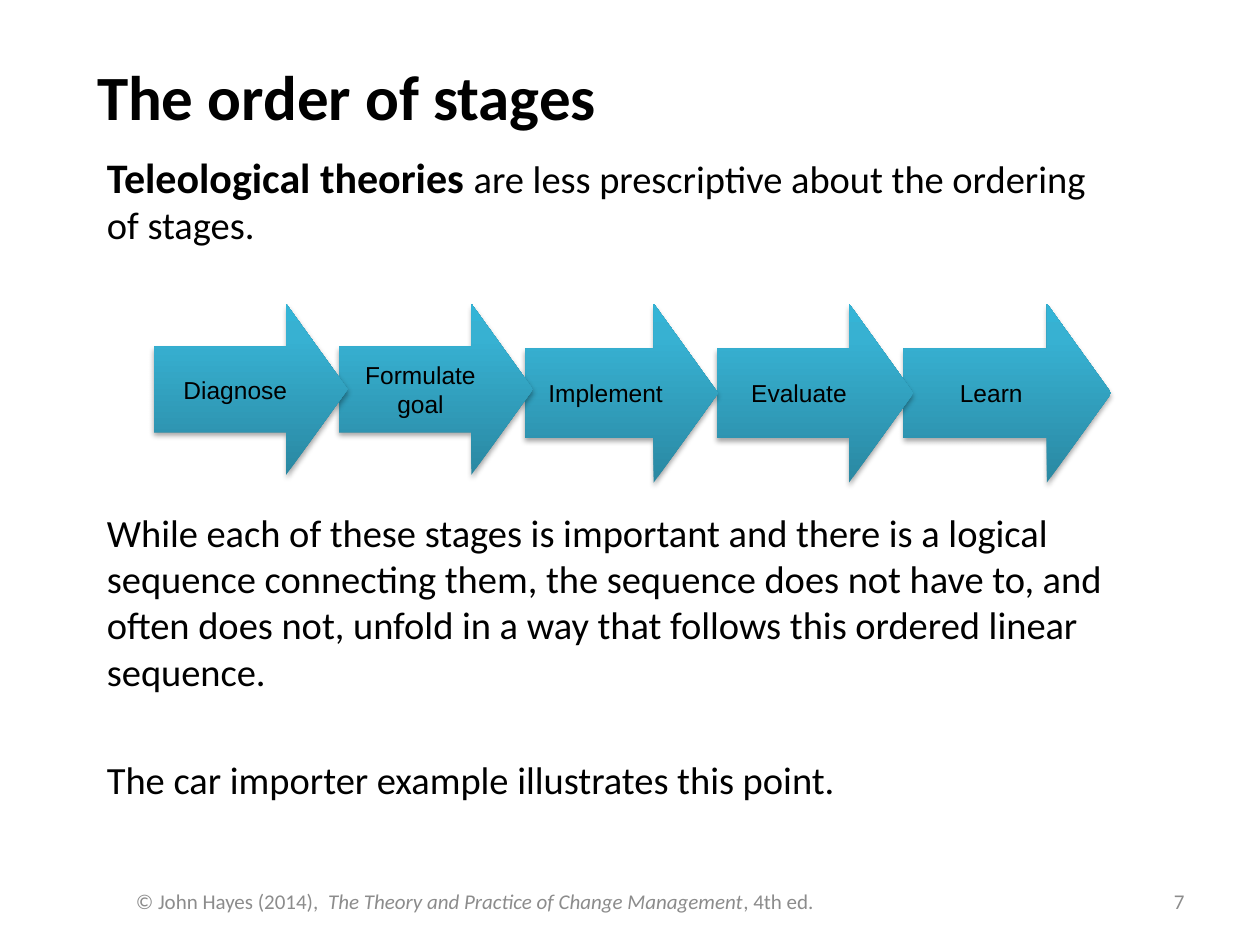
"""Build the slide on the order of stages in teleological theories."""
from dataclasses import dataclass

import pptx
import pptx.dml.color
import pptx.enum.shapes
import pptx.enum.text
import pptx.oxml
import pptx.oxml.ns
import pptx.util

Inches = pptx.util.Inches
Align = pptx.enum.text.PP_ALIGN
Anchor = pptx.enum.text.MSO_ANCHOR


@dataclass(frozen=True)
class Theme:
    body_font: str = "Calibri"
    arrow_font: str = "Arial"
    ink: str = "000000"
    muted: str = "8C8C8C"
    gradient: tuple = ((0, "2A88A2"), (80, "37B1D2"), (100, "34B4D6"))
    title_size: int = 36
    lead_size: int = 24
    body_size: int = 22
    arrow_size: int = 14
    footer_size: int = 12


class SlideBuilder:
    def __init__(self, presentation, theme):
        self.theme = theme
        self.slide = presentation.slides.add_slide(presentation.slide_layouts[5])

    def style(self, font, size, color, name=None, bold=False):
        font.name = name or self.theme.body_font
        font.size = pptx.util.Pt(size)
        font.bold = bold
        font.color.rgb = pptx.dml.color.RGBColor.from_string(color)

    def title(self, text, box):
        title = self.slide.shapes.title
        title.left, title.top, title.width, title.height = map(Inches, box)
        frame = title.text_frame
        frame.text = text
        frame.auto_size = pptx.enum.text.MSO_AUTO_SIZE.NONE
        frame.vertical_anchor = Anchor.TOP
        paragraph = frame.paragraphs[0]
        paragraph.alignment = Align.LEFT
        self.style(paragraph.font, self.theme.title_size, self.theme.ink, bold=True)

    def text(self, runs, box, size=None, color=None, align=Align.LEFT, anchor=Anchor.TOP):
        frame = self.slide.shapes.add_textbox(*map(Inches, box)).text_frame
        frame.word_wrap = True
        frame.vertical_anchor = anchor
        paragraph = frame.paragraphs[0]
        paragraph.alignment = align
        self.style(paragraph.font, size or self.theme.body_size, color or self.theme.ink)
        for text in runs:
            paragraph.add_run().text = text
        return paragraph

    def arrow(self, lines, left, width, height, head):
        shape = self.slide.shapes.add_shape(
            pptx.enum.shapes.MSO_SHAPE.RIGHT_ARROW,
            Inches(left), Inches(2.41), Inches(width), Inches(height))
        shape.adjustments[0], shape.adjustments[1] = 0.5, head
        shape.line.fill.background()
        self.gradient_and_shadow(shape)
        frame = shape.text_frame
        frame.word_wrap = True
        frame.vertical_anchor = Anchor.MIDDLE
        frame.text = "\n".join(lines)
        for paragraph in frame.paragraphs:
            paragraph.alignment = Align.CENTER
            self.style(paragraph.font, self.theme.arrow_size, self.theme.ink,
                       self.theme.arrow_font)

    def gradient_and_shadow(self, shape):
        namespace = pptx.oxml.ns.nsdecls("a")
        stops = "".join(
            f'<a:gs pos="{position * 1000}"><a:srgbClr val="{color}"/></a:gs>'
            for position, color in self.theme.gradient)
        properties = shape.element.spPr
        properties.insert(2, pptx.oxml.parse_xml(
            f'<a:gradFill {namespace} rotWithShape="1"><a:gsLst>{stops}</a:gsLst>'
            '<a:lin ang="16200000" scaled="0"/></a:gradFill>'))
        properties.append(pptx.oxml.parse_xml(
            f'<a:effectLst {namespace}><a:outerShdw blurRad="39370" dist="22860" '
            'dir="5400000" rotWithShape="0"><a:srgbClr val="000000">'
            '<a:alpha val="35000"/></a:srgbClr></a:outerShdw></a:effectLst>'))


def main():
    presentation = pptx.Presentation()
    presentation.slide_width, presentation.slide_height = Inches(10), Inches(7.5)
    theme = Theme()
    builder = SlideBuilder(presentation, theme)

    stages = (
        (["Diagnose"], 1.22, 1.54, 1.36, 0.36),
        (["Formulate", "goal"], 2.69, 1.54, 1.36, 0.36),
        (["Implement"], 4.17, 1.53, 1.42, 0.36),
        (["Evaluate"], 5.69, 1.56, 1.42, 0.36),
        (["Learn"], 7.17, 1.65, 1.42, 0.36),
    )
    for stage in reversed(stages):
        builder.arrow(*stage)

    lead = builder.text(
        ["Teleological theories ", "are less prescriptive about the ordering of stages."],
        (0.75, 1.15, 8.27, 0.91))
    lead.runs[0].font.size = pptx.util.Pt(theme.lead_size)
    lead.runs[0].font.bold = True

    builder.title("The order of stages", (0.67, 0.41, 5.67, 0.71))
    builder.text(
        ["While each of these stages is important and there is a logical sequence "
         "connecting them, the sequence does not have to, and often does not, unfold "
         "in a way that follows this ordered linear sequence."],
        (0.75, 3.99, 8.58, 1.58))
    builder.text(["The car importer example illustrates this point."],
                 (0.75, 5.95, 8.66, 0.77))

    footer = builder.text(
        ["© John Hayes (2014),  ", "The Theory and Practice of Change Management",
         ", 4th ed."],
        (0.98, 6.95, 7.64, 0.4), theme.footer_size, theme.muted, anchor=Anchor.MIDDLE)
    footer.runs[1].font.italic = True
    builder.text(["7"], (7.17, 6.95, 2.33, 0.4), theme.footer_size, theme.muted,
                 Align.RIGHT, Anchor.MIDDLE)

    presentation.save("out.pptx")


if __name__ == "__main__":
    main()
